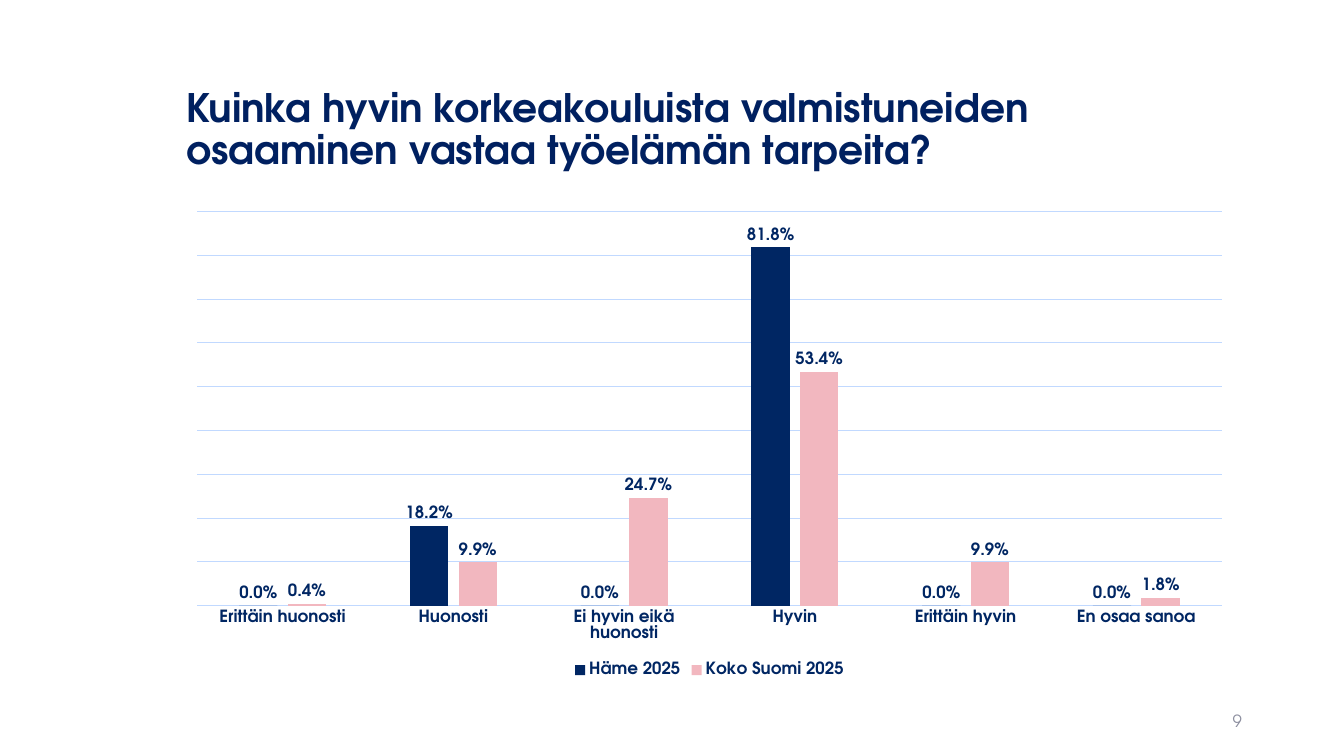
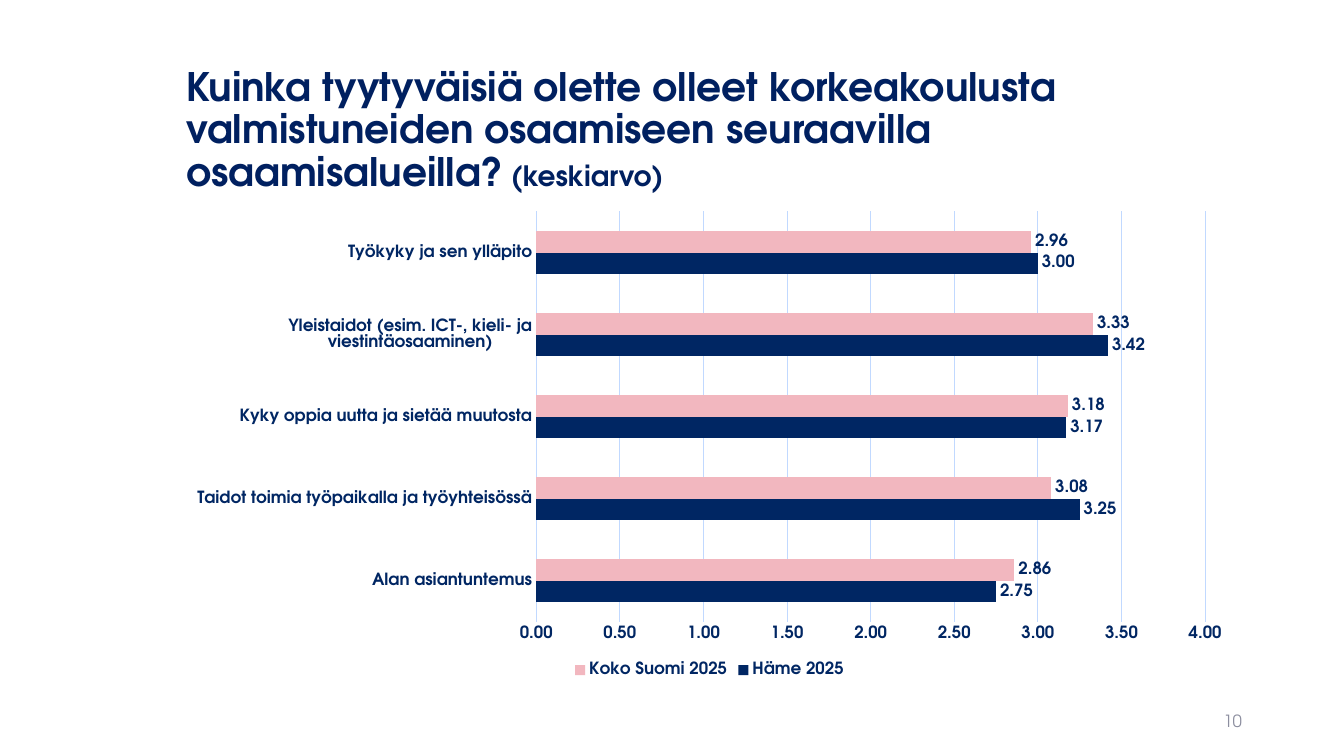
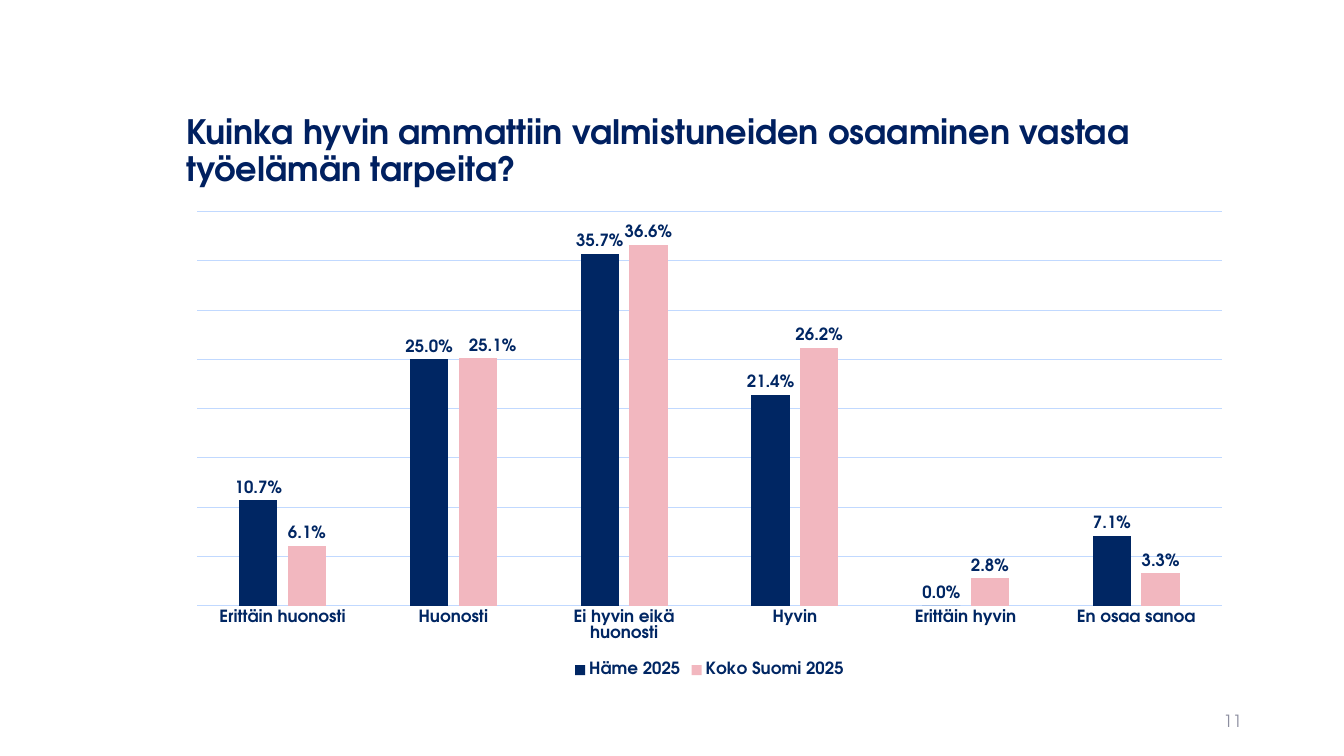
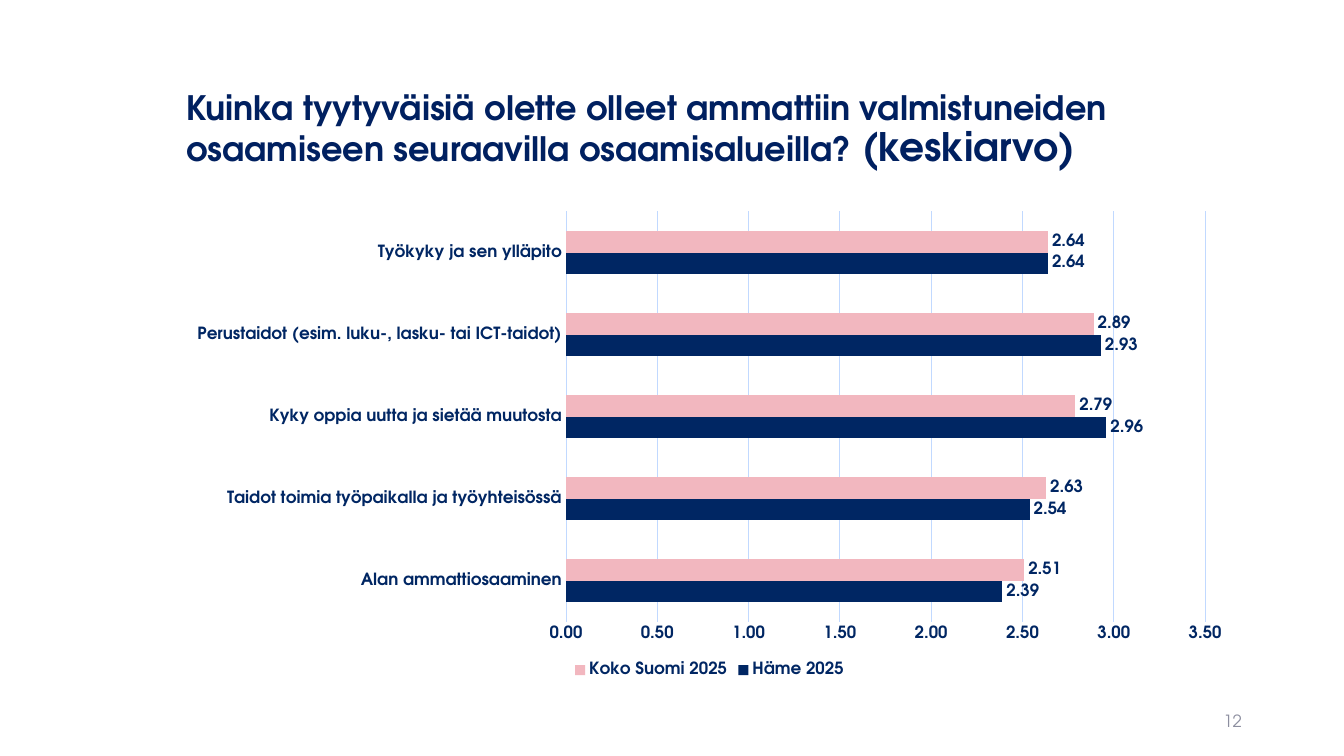
"""Build four survey slides, each with a title, a clustered chart and a page number."""
from lxml.etree import SubElement
from pptx import Presentation
from pptx.chart.data import CategoryChartData
from pptx.dml.color import RGBColor
from pptx.enum.chart import XL_CHART_TYPE, XL_LABEL_POSITION, XL_LEGEND_POSITION, XL_TICK_MARK
from pptx.enum.text import MSO_ANCHOR, MSO_AUTO_SIZE, PP_ALIGN
from pptx.oxml import parse_xml
from pptx.oxml.ns import nsdecls, qn
from pptx.util import Emu, Pt

FONT = "TeX Gyre Adventor"
TITLE_BLUE = RGBColor(0x00, 0x20, 0x60)
NAVY = RGBColor(0x00, 0x26, 0x63)
PINK = RGBColor(0xF2, 0xB7, 0xBF)
GRID_BLUE = RGBColor(0xC1, 0xD9, 0xFF)
PAGE_GREY = RGBColor(0x8C, 0x8E, 0x9F)
SERIES_COLORS = {"Häme 2025": NAVY, "Koko Suomi 2025": PINK}

FIRST_PAGE = 9
RATINGS = ["Erittäin huonosti", "Huonosti", "Ei hyvin eikä huonosti",
           "Hyvin", "Erittäin hyvin", "En osaa sanoa"]
TEAMWORK = "Taidot toimia työpaikalla ja työyhteisössä"
LEARNING = "Kyky oppia uutta ja sietää muutosta"
WELLBEING = "Työkyky ja sen ylläpito"

SLIDES = [
    {"title": [("Kuinka hyvin korkeakouluista valmistuneiden osaaminen vastaa työelämän tarpeita?", 28)],
     "title_top": 66, "columns": True, "categories": RATINGS, "maximum": 0.9, "step": 0.1,
     "values": [(0, 0.182, 0, 0.818, 0, 0), (0.004, 0.099, 0.247, 0.534, 0.099, 0.018)]},
    {"title": [("Kuinka tyytyväisiä olette olleet korkeakoulusta valmistuneiden osaamiseen "
                "seuraavilla osaamisalueilla?", 28), (" (keskiarvo)", 20)],
     "title_top": 66, "columns": False, "maximum": 4, "step": 0.5,
     "categories": ["Alan asiantuntemus", TEAMWORK, LEARNING,
                    "Yleistaidot (esim. ICT-, kieli- ja viestintäosaaminen)", WELLBEING],
     "values": [(2.75, 3.25, 3.17, 3.42, 3), (2.86, 3.08, 3.18, 3.33, 2.96)]},
    {"title": [("Kuinka hyvin ammattiin valmistuneiden osaaminen vastaa työelämän tarpeita?", 24)],
     "title_top": 87, "columns": True, "categories": RATINGS, "maximum": 0.4, "step": 0.05,
     "values": [(0.107, 0.25, 0.357, 0.214, 0, 0.071), (0.061, 0.251, 0.366, 0.262, 0.028, 0.033)],
     "shifted_label": 1},
    {"title": [("Kuinka tyytyväisiä olette olleet ammattiin valmistuneiden osaamiseen "
                "seuraavilla osaamisalueilla?", 24), (" (keskiarvo)", 28)],
     "title_top": 66, "columns": False, "maximum": 3.5, "step": 0.5,
     "categories": ["Alan ammattiosaaminen", TEAMWORK, LEARNING,
                    "Perustaidot (esim. luku-, lasku- tai ICT-taidot)", WELLBEING],
     "values": [(2.39, 2.54, 2.96, 2.93, 2.64), (2.51, 2.63, 2.79, 2.89, 2.64)]},
]


def px(length):
    return Emu(round(length * 914400 / 100.8))


def style_font(font, size, color, bold):
    font.name = FONT
    font.size = Pt(size)
    font.bold = bold
    font.color.rgb = color


presentation = Presentation()
presentation.slide_width = px(1344)
presentation.slide_height = px(756)

for page, content in enumerate(SLIDES, FIRST_PAGE):
    slide = presentation.slides.add_slide(presentation.slide_layouts[5])

    title = slide.shapes.title
    title.left, title.top, title.width, title.height = px(176), px(content["title_top"]), px(1067), px(130)
    title.text_frame.auto_size = MSO_AUTO_SIZE.NONE
    title.text_frame.vertical_anchor = MSO_ANCHOR.MIDDLE
    paragraph = title.text_frame.paragraphs[0]
    paragraph.alignment = PP_ALIGN.LEFT
    paragraph.line_spacing = 0.9
    paragraph.space_before = Pt(0)
    for text, size in content["title"]:
        run = paragraph.add_run()
        run.text = text
        style_font(run.font, size, TITLE_BLUE, True)

    page_number = slide.shapes.add_textbox(px(950), px(701), px(302), px(40))
    page_number.text_frame.word_wrap = True
    page_number.text_frame.vertical_anchor = MSO_ANCHOR.MIDDLE
    paragraph = page_number.text_frame.paragraphs[0]
    paragraph.alignment = PP_ALIGN.RIGHT
    run = paragraph.add_run()
    run.text = str(page)
    style_font(run.font, 12, PAGE_GREY, False)

    columns = content["columns"]
    number_format = "0.0%" if columns else "0.00"
    chart_data = CategoryChartData(number_format=number_format)
    chart_data.categories = content["categories"]
    for name, values in zip(SERIES_COLORS, content["values"]):
        chart_data.add_series(name, values)
    chart_type = XL_CHART_TYPE.COLUMN_CLUSTERED if columns else XL_CHART_TYPE.BAR_CLUSTERED
    chart = slide.shapes.add_chart(chart_type, px(176), px(202), px(1067), px(480), chart_data).chart
    style_font(chart.font, 12, NAVY, True)
    chart.has_title = False
    chart.has_legend = True
    chart.legend.position = XL_LEGEND_POSITION.BOTTOM
    chart.legend.include_in_layout = False
    style_font(chart.legend.font, 12, NAVY, True)

    for axis in (chart.category_axis, chart.value_axis):
        axis.major_tick_mark = XL_TICK_MARK.NONE
        axis.minor_tick_mark = XL_TICK_MARK.NONE
        style_font(axis.tick_labels.font, 12, NAVY, True)
    category_line = chart.category_axis.format.line
    value_axis = chart.value_axis
    value_axis.has_major_gridlines = True
    for line in (category_line, value_axis.major_gridlines.format.line):
        line.color.rgb = GRID_BLUE
        line.width = Pt(0.75)
    value_axis.format.line.fill.background()
    value_axis.minimum_scale = 0
    value_axis.maximum_scale = content["maximum"]
    value_axis.major_unit = content["step"]
    value_axis.tick_labels.number_format = number_format
    value_axis.tick_labels.number_format_is_linked = False
    value_axis.visible = not columns

    plot = chart.plots[0]
    plot.vary_by_categories = False
    plot.gap_width = 219 if columns else 182
    plot.overlap = -27 if columns else 0
    for series in plot.series:
        series.format.fill.solid()
        series.format.fill.fore_color.rgb = SERIES_COLORS[series.name]
        series.invert_if_negative = False
        labels = series.data_labels
        labels.show_value = True
        labels.position = XL_LABEL_POSITION.OUTSIDE_END
        labels.number_format = number_format
        labels.number_format_is_linked = False
        style_font(labels.font, 12, NAVY, True)

    if "shifted_label" in content:
        series = plot.series[1]
        label = series.points[content["shifted_label"]].data_label
        style_font(label.font, 12, NAVY, True)
        label.position = XL_LABEL_POSITION.OUTSIDE_END
        layout = parse_xml(f"<c:layout {nsdecls('c')}><c:manualLayout/></c:layout>")
        for axis_name, offset in (("x", "0.014"), ("y", "0")):
            SubElement(layout[0], qn(f"c:{axis_name}")).set("val", offset)
        series.data_labels._element.find(f"{qn('c:dLbl')}/{qn('c:idx')}").addnext(layout)

presentation.save("out.pptx")
